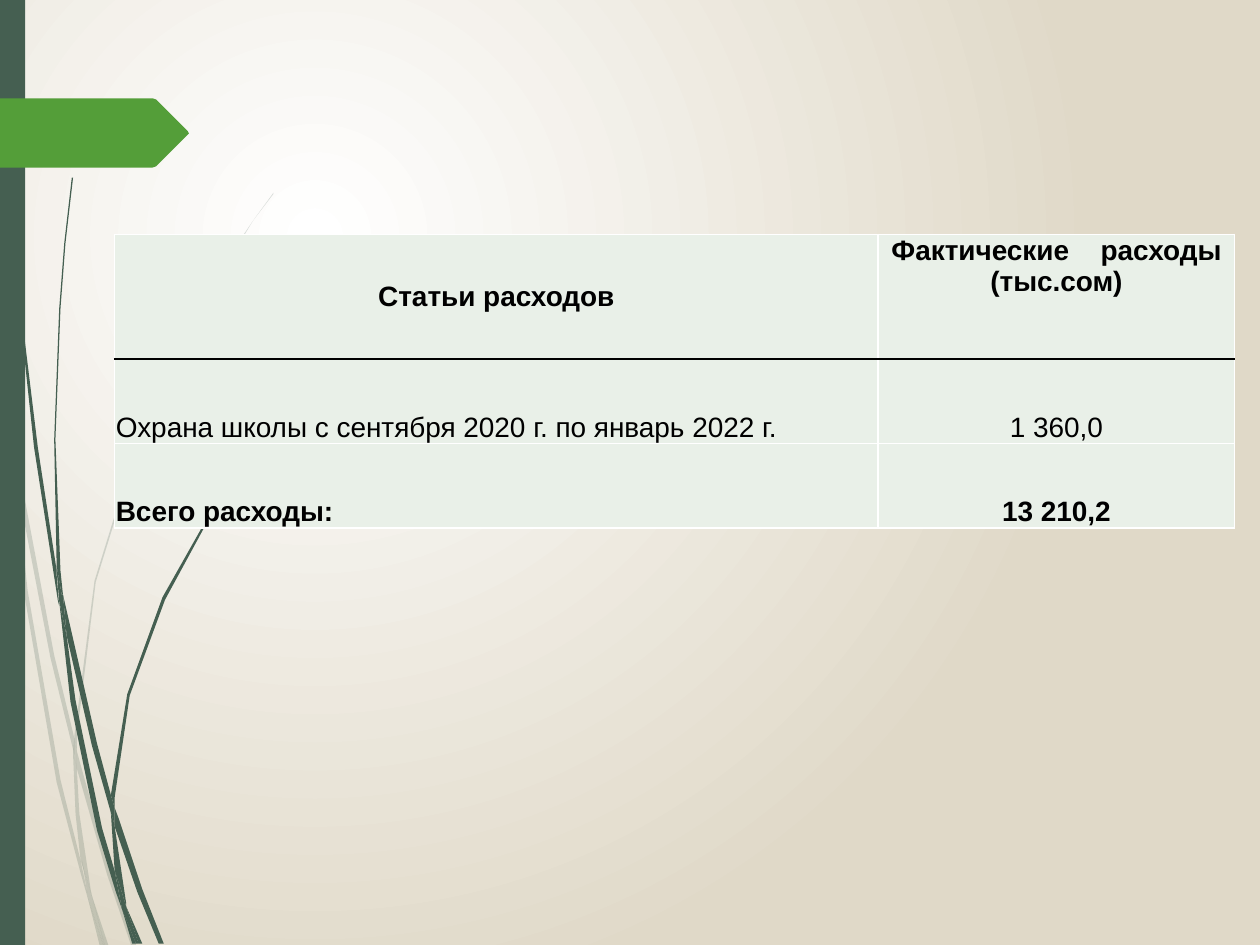
import pptx
import pptx.dml.color
import pptx.enum.text
import pptx.oxml
import pptx.oxml.ns
import pptx.util

COLUMNS, ROWS = 1000, 750
UNIT = pptx.util.Inches(10) // COLUMNS
GREEN, LEAF, MINT, WHITE, BLACK = "455F51", "549E39", "E9F0E8", "FFFFFF", "000000"
NAMESPACE = pptx.oxml.ns.nsdecls("a")
ALIGN = pptx.enum.text.PP_ALIGN
ANCHOR = pptx.enum.text.MSO_ANCHOR

PALE_GRASS = [
    [(8, 350), (6, 322), (0, 282), (0, 299), (7, 344)],
    [(40, 522), (59, 599), (59, 586), (43, 520), (10, 345), (12, 376)],
    [(64, 607), (61, 596), (61, 610), (85, 694), (104, 750), (108, 750), (88, 692)],
    [(83, 750), (86, 750), (73, 711)],
    [(64, 683), (48, 619), (22, 469), (12, 376), (8, 350), (19, 470), (45, 621),
     (64, 693), (70, 714), (69, 707)],
    [(58, 599), (60, 646), (64, 683), (67, 692), (73, 711), (72, 706), (63, 646),
     (61, 610), (61, 608)],
    [(61, 584), (76, 462), (111, 349), (159, 245), (187, 198), (201, 175), (217, 154),
     (217, 153), (201, 175), (186, 197), (158, 244), (110, 348), (75, 461), (59, 584),
     (59, 586), (61, 596)],
    [(70, 714), (79, 750), (82, 750)],
    [(61, 608), (61, 610), (61, 596), (59, 586), (58, 599)],
    [(67, 692), (65, 683), (69, 707), (70, 714), (82, 750), (83, 750), (73, 711)],
]
DARK_GRASS = [
    [(5, 110), (14, 233), (27, 355), (46, 477), (47, 481), (45, 457), (45, 453),
     (30, 355), (15, 232), (6, 109), (4, 48), (3, 0), (2, 0), (3, 48)],
    [(73, 592), (88, 645), (88, 633), (88, 631), (77, 590), (50, 472), (53, 505)],
    [(94, 649), (91, 641), (91, 656), (109, 708), (126, 749), (130, 749), (113, 706)],
    [(91, 691), (81, 657), (60, 556), (53, 505), (47, 477), (56, 557), (77, 659),
     (92, 708), (97, 722), (96, 717)],
    [(50, 472), (48, 453), (44, 349), (48, 245), (52, 193), (58, 141), (57, 141),
     (51, 193), (47, 245), (43, 349), (45, 449), (49, 472)],
    [(110, 749), (113, 749), (100, 719)],
    [(47, 477), (53, 505), (50, 472), (49, 472), (45, 449), (45, 453)],
    [(91, 633), (103, 552), (131, 476), (169, 406), (191, 374), (203, 359), (216, 344),
     (215, 344), (203, 358), (191, 373), (168, 405), (129, 474), (101, 551), (88, 631),
     (91, 641)],
    [(97, 722), (105, 749), (108, 749)],
    [(88, 645), (91, 691), (96, 706), (100, 719), (100, 716), (91, 656), (90, 651)],
    [(88, 645), (90, 651), (91, 656), (91, 641), (88, 631), (88, 633)],
    [(96, 706), (91, 691), (96, 717), (97, 722), (108, 749), (110, 749), (100, 719)],
]
SIDE_BAR = [(0, 0), (20, 0), (20, 750), (0, 750)]
ARROW = [(0, 78), (121, 78), (124, 79), (149, 104), (150, 105.5), (149, 107),
         (124, 132), (121, 133), (0, 133)]


def rgb(code):
    return pptx.dml.color.RGBColor.from_string(code)


def grid(steps):
    return pptx.util.Emu(round(steps * UNIT))


def paint_background(slide):
    fill = slide.background.fill
    fill.gradient()
    for stop, code in zip(fill.gradient_stops, (WHITE, "E0D9C8")):
        stop.color.rgb = rgb(code)
    gradient = slide.element.xpath(".//a:gradFill")[0]
    gradient.replace(gradient.xpath("a:lin")[0], pptx.oxml.parse_xml(
        f'<a:path {NAMESPACE} path="circle">'
        '<a:fillToRect l="50000" t="50000" r="100000" b="100000"/></a:path>'))


def draw_outline(slide, points, code, opacity=100):
    builder = slide.shapes.build_freeform(*points[0], scale=UNIT)
    builder.add_line_segments(points[1:], close=True)
    outline = builder.convert_to_shape()
    outline.shadow.inherit = False
    outline.line.fill.background()
    outline.fill.solid()
    outline.fill.fore_color.rgb = rgb(code)
    if opacity < 100:
        outline.element.xpath("./p:spPr/a:solidFill/a:srgbClr")[0].append(
            pptx.oxml.parse_xml(f'<a:alpha {NAMESPACE} val="{opacity * 1000}"/>'))


def draw_bar(slide, code):
    (left, top), (right, bottom) = SIDE_BAR[0], SIDE_BAR[2]
    bar = slide.shapes.add_shape(1, grid(left), grid(top), grid(right), grid(bottom))
    bar.shadow.inherit = False
    bar.line.fill.background()
    bar.fill.solid()
    bar.fill.fore_color.rgb = rgb(code)


def style_cell(cell, top, bottom, anchor):
    for side, code in zip("LRTB", (WHITE, WHITE, top, bottom)):
        cell._tc.get_or_add_tcPr().append(pptx.oxml.parse_xml(
            f'<a:ln{side} {NAMESPACE} w="12700"><a:solidFill>'
            f'<a:srgbClr val="{code}"/></a:solidFill></a:ln{side}>'))
    cell.fill.solid()
    cell.fill.fore_color.rgb = rgb(MINT)
    cell.margin_left = cell.margin_right = cell.margin_top = grid(1)
    cell.margin_bottom = 0
    cell.vertical_anchor = anchor


def write_cell(cell, lines, align, bold):
    frame = cell.text_frame
    for number, line in enumerate(lines):
        paragraph = frame.add_paragraph() if number else frame.paragraphs[0]
        for part in line:
            paragraph.add_run().text = part
        paragraph.alignment = align
        paragraph.font.name = "Arial"
        paragraph.font.size = pptx.util.Pt(16)
        paragraph.font.bold = bold
        paragraph.font.color.rgb = rgb(BLACK)


def add_expenses(slide):
    heading = [["Фактические", " ", "расходы"], ["(тыс.сом)"]]
    entries = [
        ([["Статьи расходов"]], heading),
        ([["Охрана школы с сентября 2020 г. по январь 2022 г."]], [["1 360,0"]]),
        ([["Всего расходы:"]], [["13 210,2"]]),
    ]
    widths, heights = (606, 283), (99, 67, 67)
    expenses = slide.shapes.add_table(
        len(heights), len(widths), grid(91), grid(186),
        grid(sum(widths)), grid(sum(heights))).table
    for column, width in zip(expenses.columns, widths):
        column.width = grid(width)
    for number, (row, height) in enumerate(zip(expenses.rows, heights)):
        row.height = grid(height)
        top = BLACK if number == 1 else WHITE
        bottom = BLACK if number == 0 else WHITE
        for place, (cell, lines) in enumerate(zip(row.cells, entries[number])):
            header_anchor = ANCHOR.TOP if place else ANCHOR.MIDDLE
            style_cell(cell, top, bottom, ANCHOR.BOTTOM if number else header_anchor)
            align = ALIGN.LEFT if number and not place else ALIGN.CENTER
            write_cell(cell, lines, align, number != 1)
    gap = expenses.cell(0, 1).text_frame.paragraphs[0].runs[1]
    gap._r.get_or_add_rPr().set("spc", "1350")


def main():
    deck = pptx.Presentation()
    deck.slide_width, deck.slide_height = grid(COLUMNS), grid(ROWS)
    slide = deck.slides.add_slide(deck.slide_layouts[6])
    paint_background(slide)
    for blade in PALE_GRASS:
        draw_outline(slide, blade, GREEN, 20)
    for blade in DARK_GRASS:
        draw_outline(slide, blade, GREEN)
    draw_bar(slide, GREEN)
    draw_outline(slide, ARROW, LEAF)
    add_expenses(slide)
    deck.save("out.pptx")


if __name__ == "__main__":
    main()
